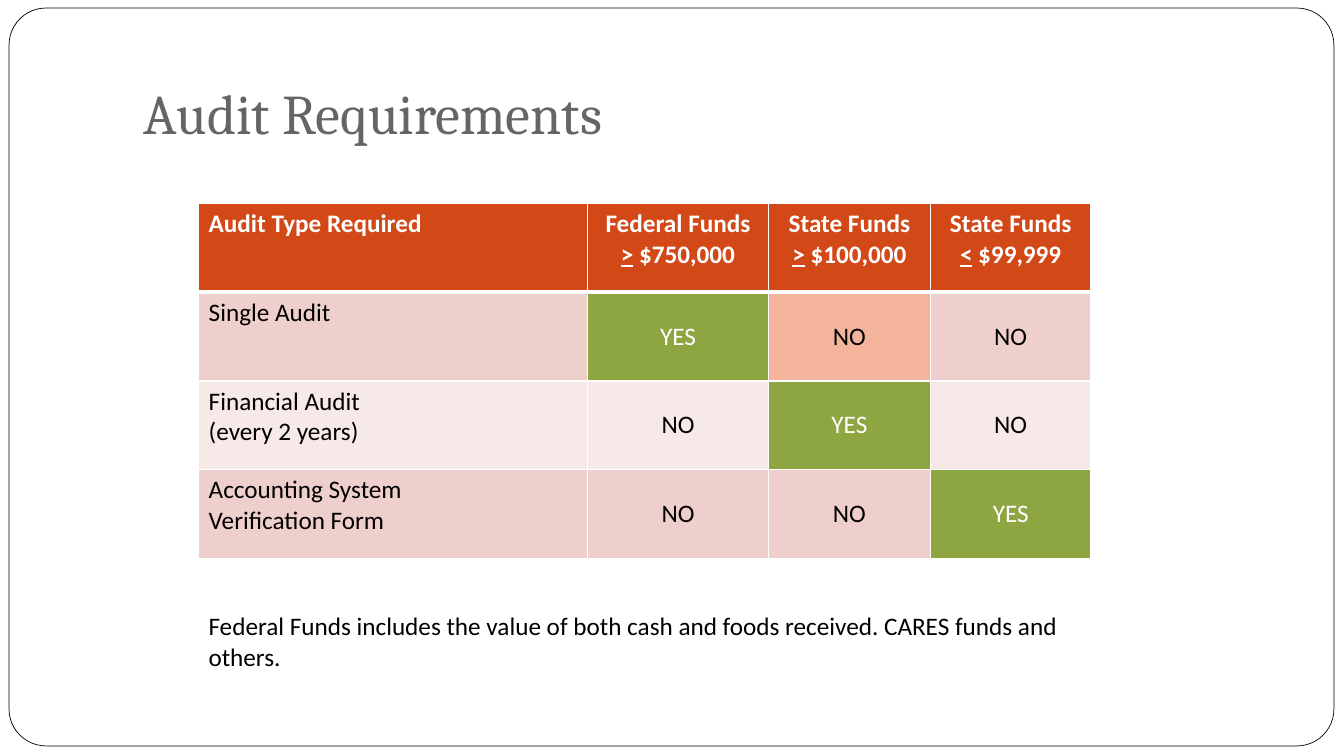
"""Build the Audit Requirements slide with its table of funding thresholds."""
import pptx
import pptx.util
import pptx.dml.color
import pptx.enum.shapes
import pptx.enum.text
import pptx.oxml
import pptx.oxml.ns

Inches, Pt = pptx.util.Inches, pptx.util.Pt
RGB = pptx.dml.color.RGBColor
ALIGN = pptx.enum.text.PP_ALIGN
ANCHOR = pptx.enum.text.MSO_ANCHOR

WHITE = RGB(0xFF, 0xFF, 0xFF)
BLACK = RGB(0x00, 0x00, 0x00)
GRAY = RGB(0x69, 0x64, 0x64)
RUST = RGB(0xD3, 0x48, 0x17)
GREEN = RGB(0x8E, 0xA6, 0x42)
PEACH = RGB(0xF4, 0xB3, 0x9B)
ROSE = RGB(0xEF, 0xCF, 0xCC)
BLUSH = RGB(0xF7, 0xE9, 0xE8)

LEFT, TOP, WIDE = 1.97, 2.02, 8.85
COLS = [3.86, 1.79, 1.61, 1.59]
HIGH = 0.88

HEADS = ["Audit Type Required", "Federal Funds\n> $750,000",
         "State Funds\n> $100,000", "State Funds\n< $99,999"]
TYPES = ["Single Audit", "Financial Audit\n(every 2 years)",
         "Accounting System\nVerification Form"]


def write(frame, text, size, color, name="Calibri", bold=False, align=ALIGN.LEFT):
    """Fill a text frame, underlining a leading comparison sign."""
    for i, line in enumerate(text.split("\n")):
        para = frame.add_paragraph() if i else frame.paragraphs[0]
        para.alignment = align
        cut = 1 if line[0] in "<>" else 0
        for part, under in ((line[:cut], True), (line[cut:], False)):
            if part:
                run = para.add_run()
                run.text = part
                look = {"size": Pt(size), "name": name, "bold": bold, "underline": under}
                for key, value in look.items():
                    setattr(run.font, key, value)
                run.font.color.rgb = color


def edge(cell, widths):
    """Draw white borders of the given widths on a cell."""
    props = cell._tc.get_or_add_tcPr()
    for i, (side, width) in enumerate(widths.items()):
        line = pptx.oxml.parse_xml(
            f'<a:ln{side} {pptx.oxml.ns.nsdecls("a")} w="{Pt(width)}">'
            f'<a:solidFill><a:srgbClr val="{WHITE}"/></a:solidFill></a:ln{side}>')
        props.insert(i, line)


deck = pptx.Presentation()
deck.slide_width, deck.slide_height = Inches(13.33), Inches(7.5)
slide = deck.slides.add_slide(deck.slide_layouts[6])
shapes = slide.shapes

frame = shapes.add_shape(pptx.enum.shapes.MSO_SHAPE.ROUNDED_RECTANGLE,
                         Inches(0.09), Inches(0.08), Inches(13.14), Inches(7.32))
frame.adjustments[0] = 0.05
frame.shadow.inherit = False
frame.fill.solid()
frame.fill.fore_color.rgb = WHITE
frame.line.color.rgb = BLACK
frame.line.width = Pt(0.5)

title = shapes.add_textbox(Inches(1.33), Inches(0.3), Inches(11.33), Inches(1.25)).text_frame
setup = {"word_wrap": True, "vertical_anchor": ANCHOR.BOTTOM, "margin_bottom": Inches(0.1)}
for key, value in setup.items():
    setattr(title, key, value)
write(title, "Audit Requirements", 40, GRAY, "Cambria")

rows = len(TYPES) + 1
table = shapes.add_table(rows, len(COLS), Inches(LEFT), Inches(TOP),
                         Inches(WIDE), Inches(HIGH * rows)).table
for col, width in zip(table.columns, COLS):
    col.width = Inches(width)
for row in table.rows:
    row.height = Inches(HIGH)

for r in range(rows):
    for c in range(len(COLS)):
        cell = table.cell(r, c)
        fill, ink = (ROSE if r % 2 else BLUSH), BLACK
        if r == 0:
            text, fill, ink = HEADS[c], RUST, WHITE
        elif c == 0:
            text = TYPES[r - 1]
        elif r == c:
            text, fill, ink = "YES", GREEN, WHITE
        else:
            text = "NO"
        if (r, c) == (1, 2):
            fill = PEACH
        cell.fill.solid()
        cell.fill.fore_color.rgb = fill
        cell.vertical_anchor = ANCHOR.MIDDLE if r and c else ANCHOR.TOP
        write(cell.text_frame, text, 18, ink, bold=r == 0,
              align=ALIGN.CENTER if c else ALIGN.LEFT)
        edge(cell, {"L": 1, "R": 1, "T": 3 if r == 1 else 1, "B": 3 if r == 0 else 1})

note = shapes.add_textbox(Inches(LEFT), Inches(6.01), Inches(WIDE), Inches(0.71)).text_frame
note.word_wrap = True
write(note, "Federal Funds includes the value of both cash and foods received. "
      "CARES funds and others.", 18, BLACK)

deck.save("out.pptx")
